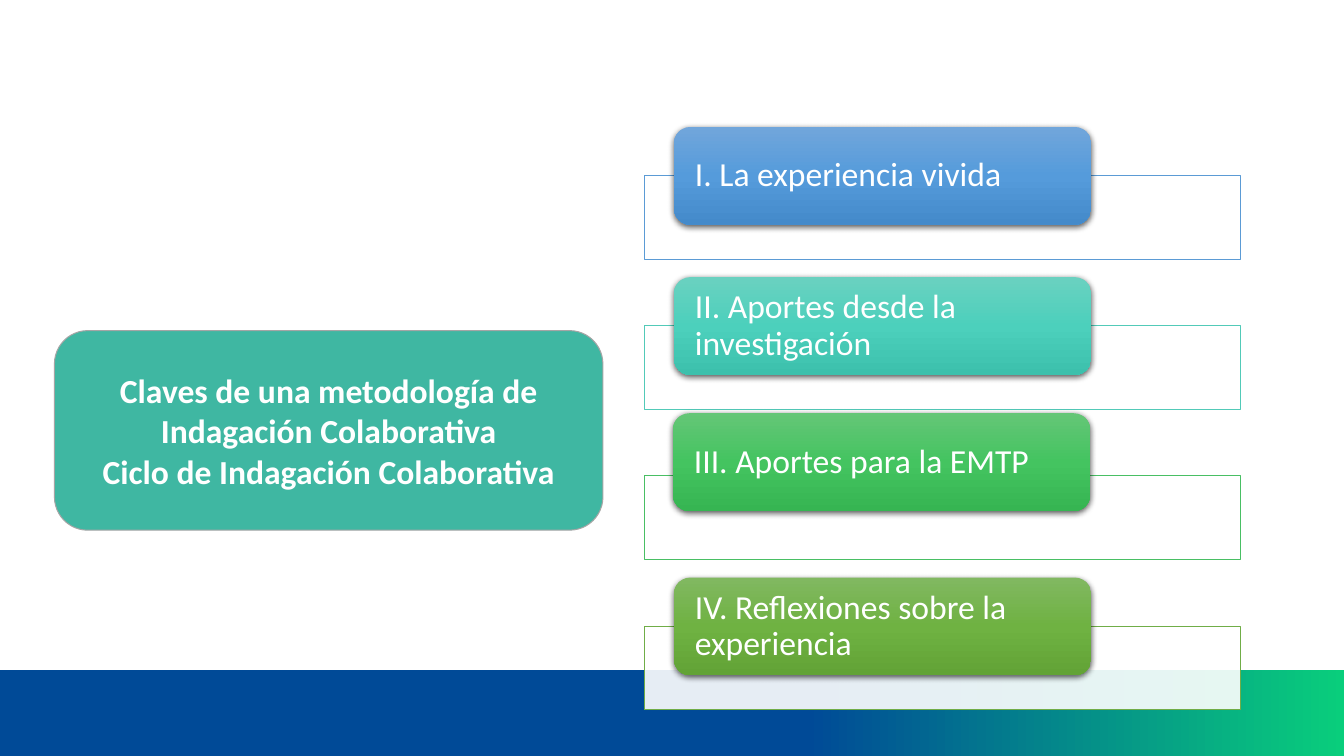
from lxml import etree
from pptx import Presentation
from pptx.dml.color import RGBColor
from pptx.enum.shapes import MSO_SHAPE
from pptx.enum.text import MSO_ANCHOR, PP_ALIGN
from pptx.oxml.ns import qn
from pptx.util import Inches, Pt

RECT = MSO_SHAPE.RECTANGLE
ROUNDED = MSO_SHAPE.ROUNDED_RECTANGLE
MIDDLE = MSO_ANCHOR.MIDDLE
LEFT, CENTER = PP_ALIGN.LEFT, PP_ALIGN.CENTER

FONT = "Calibri"
SLIDE_WIDTH, SLIDE_HEIGHT = 13.33, 7.5
COLORS = {
    "white": "FFFFFF",
    "black": "000000",
    "topic": "3FB7A2",
    "topic_line": "A5A5A5",
    "band_start": "004A97",
    "band_end": "09CE7C",
}
TOPIC = [
    "Claves de una metodología de Indagación Colaborativa",
    "Ciclo de Indagación Colaborativa",
]
# Wording, frame line, pill gradient from top to bottom, pill shift (x, y)
SECTIONS = [
    ("I. La experiencia vivida", "5B9BD5",
     ("71A6DB", "559BDB", "448ACA"), (0, 0)),
    ("II. Aportes desde la investigación", "52CAB8",
     ("6AD1C0", "4CD0BC", "3CC0AC"), (0, 0)),
    ("III. Aportes para la EMTP", "49BF64",
     ("64C677", "44C460", "36B552"), (-0.01, -0.14)),
    ("IV. Reflexiones sobre la experiencia", "70AD47",
     ("81B861", "6FB242", "62A336"), (0, 0)),
]


def add_color(parent, color, alpha=None):
    node = etree.SubElement(parent, qn("a:srgbClr"), val=color)
    if alpha is not None:
        etree.SubElement(node, qn("a:alpha"), val=str(alpha * 1000))


def add_box(slide, kind, left, top, width, height, line=None, line_width=0.5):
    box = slide.shapes.add_shape(
        kind, Inches(left), Inches(top), Inches(width), Inches(height))
    box.shadow.inherit = False
    if line:
        box.line.color.rgb = RGBColor.from_string(line)
        box.line.width = Pt(line_width)
    else:
        box.line.fill.background()
    return box


def fill_solid(box, color):
    box.fill.solid()
    box.fill.fore_color.rgb = RGBColor.from_string(color)


def fill_gradient(box, stops, angle):
    """Fill with (percent, colour) stops; the angle is counter-clockwise."""
    box.fill.gradient()
    box.fill.gradient_angle = angle
    stop_list = box.element.spPr.find(qn("a:gradFill")).find(qn("a:gsLst"))
    for stop in list(stop_list):
        stop_list.remove(stop)
    for percent, color in stops:
        stop = etree.SubElement(stop_list, qn("a:gs"), pos=str(percent * 1000))
        add_color(stop, color)


def add_drop_shadow(box):
    effects = box.element.spPr.find(qn("a:effectLst"))
    shadow = etree.SubElement(
        effects, qn("a:outerShdw"), blurRad=str(Pt(4.5)), dist=str(Pt(1.5)),
        dir="5400000", algn="ctr", rotWithShape="0")
    add_color(shadow, COLORS["black"], 63)


def write(box, lines, align, bold=False, spacing=None):
    frame = box.text_frame
    frame.word_wrap = True
    frame.vertical_anchor = MIDDLE
    frame.text = "\n".join(lines)
    for paragraph in frame.paragraphs:
        paragraph.alignment = align
        paragraph.line_spacing = spacing
        for run in paragraph.runs:
            run.font.name = FONT
            run.font.size = Pt(24)
            run.font.bold = bold
            run.font.color.rgb = RGBColor.from_string(COLORS["white"])


def add_footer_band(slide, left, top, width, height):
    band = add_box(slide, RECT, left, top, width, height)
    stops = [(60, COLORS["band_start"]), (100, COLORS["band_end"])]
    fill_gradient(band, stops, 0)


def add_topic(slide, left, top, width, height):
    topic = add_box(slide, ROUNDED, left, top, width, height,
                    COLORS["topic_line"], 0.75)
    fill_solid(topic, COLORS["topic"])
    write(topic, TOPIC, CENTER, bold=True)


def add_section(slide, left, top, width, section):
    """Place a framed bar with its title pill overlapping the upper edge."""
    title, line, shades, (shift_x, shift_y) = section
    bar = add_box(slide, RECT, left, top + 0.48, width, 0.83, line)
    fill_solid(bar, COLORS["white"])
    white = bar.element.spPr.find(qn("a:solidFill")).find(qn("a:srgbClr"))
    etree.SubElement(white, qn("a:alpha"), val="90000")

    pill = add_box(slide, ROUNDED, left + 0.05 * width + shift_x,
                   top + shift_y, 0.7 * width, 0.97)
    fill_gradient(pill, zip((0, 50, 100), shades), 270)
    add_drop_shadow(pill)
    frame = pill.text_frame
    frame.margin_left = frame.margin_right = Inches(0.16)
    frame.margin_top = frame.margin_bottom = 0
    write(pill, [title], LEFT, spacing=0.9)


def add_section_list(slide, left, top, width, pitch):
    for index, section in enumerate(SECTIONS):
        add_section(slide, left, top + index * pitch, width, section)


def main():
    deck = Presentation()
    deck.slide_width = Inches(SLIDE_WIDTH)
    deck.slide_height = Inches(SLIDE_HEIGHT)
    slide = deck.slides.add_slide(deck.slide_layouts[6])
    add_footer_band(slide, 0, 6.65, SLIDE_WIDTH, SLIDE_HEIGHT - 6.65)
    add_topic(slide, 0.54, 3.28, 5.44, 1.98)
    add_section_list(slide, 6.39, 1.26, 5.91, 1.49)
    deck.save("out.pptx")


if __name__ == "__main__":
    main()
